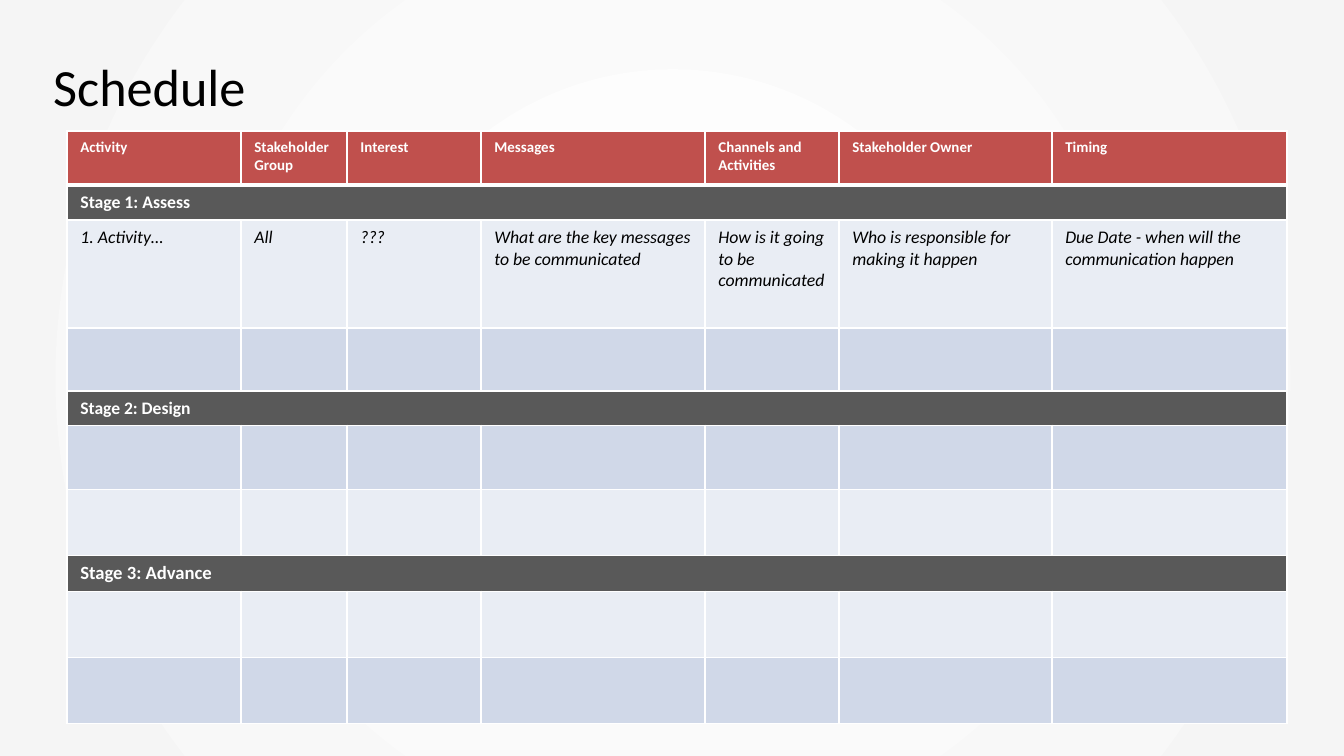
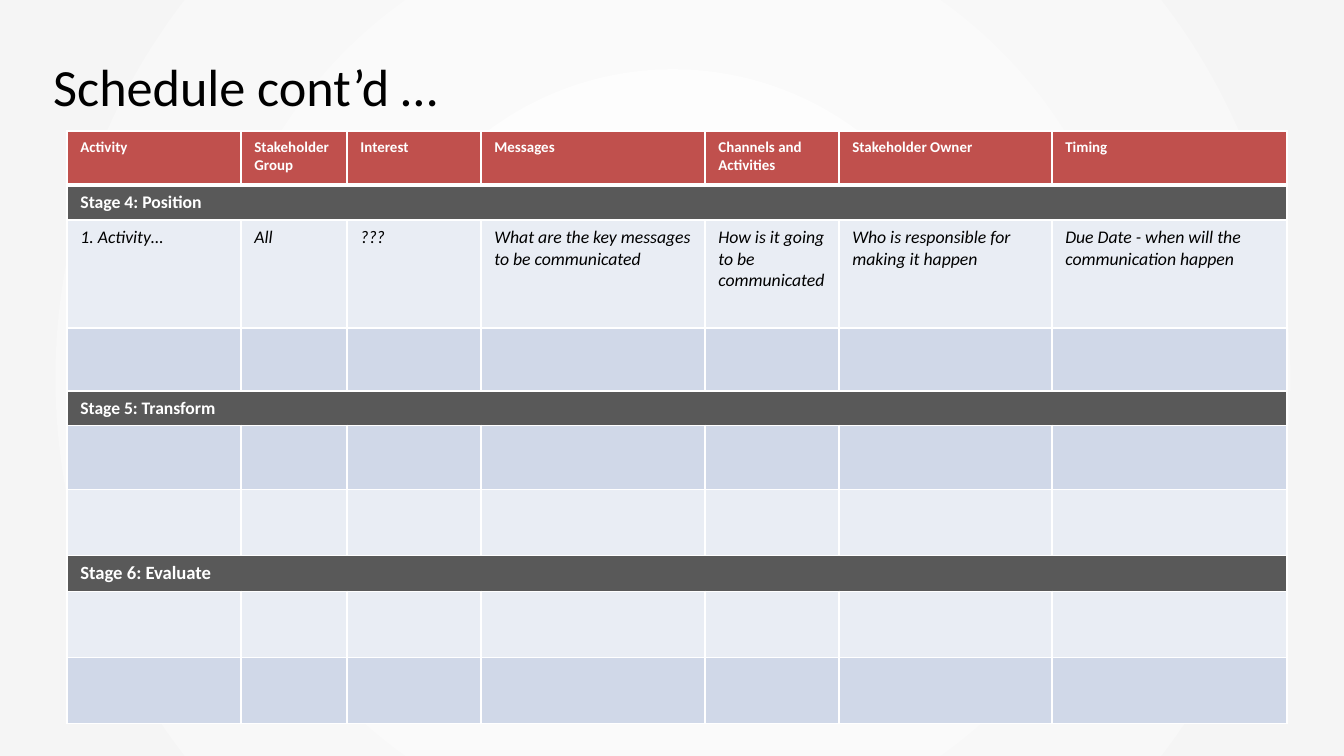
from lxml import etree
from pptx import Presentation, util as u
from pptx.dml.color import RGBColor
from pptx.enum import shapes, text
from pptx.oxml.ns import qn

SCALE = 914400 / 134.4
WIDE, HIGH = 1344, 756
FONT = "Calibri"
WHITE = RGBColor(255, 255, 255)
BLACK = RGBColor(0, 0, 0)
SMOKE = RGBColor(0xF5, 0xF5, 0xF5)
RED = RGBColor(0xC0, 0x50, 0x4D)
GRAY = RGBColor(0x59, 0x59, 0x59)
LIGHT = RGBColor(0xE9, 0xED, 0xF4)
BLUE = RGBColor(0xD0, 0xD8, 0xE8)

COLS = [174, 106, 134, 224, 134, 213, 235]
ROWS = [54, 35, 108, 63, 34, 64, 66, 36, 66, 66]
FILLS = [RED, GRAY, LIGHT, BLUE, GRAY, BLUE, LIGHT, GRAY, LIGHT, BLUE]
STAGES = {1: 9.5, 4: 9.4, 7: 10}
HEADS = ["Activity", "Stakeholder\vGroup", "Interest", "Messages",
         "Channels and Activities", "Stakeholder Owner", "Timing"]
SAMPLE = ["1. Activity…", "All", "???",
          "What are the key messages to be communicated",
          "How is it going to be communicated",
          "Who is responsible for making it happen",
          "Due Date - when will the communication happen"]
SLIDES = [
    ("Schedule", ["Stage 1: Assess", "Stage 2: Design", "Stage 3: Advance"]),
    ("Schedule cont’d …",
     ["Stage 4: Position", "Stage 5: Transform", "Stage 6: Evaluate"]),
]


def px(num):
    """Turn px into EMU."""
    return u.Emu(round(num * SCALE))


def write(frame, words, size, color, bold=False, italic=False):
    """Write one paragraph in one font."""
    para = frame.paragraphs[0]
    para.text = words
    font = para.font
    font.name, font.size, font.color.rgb = FONT, u.Pt(size), color
    font.bold, font.italic = bold, italic


def backdrop(slide):
    """Cover the slide with a round gradient."""
    rect = slide.shapes.add_shape(
        shapes.MSO_SHAPE.RECTANGLE, 0, 0, px(WIDE + 2), px(HIGH))
    rect.shadow.inherit = False
    rect.line.fill.background()
    rect.fill.gradient()
    for stop, color in zip(rect.fill.gradient_stops, (WHITE, SMOKE)):
        stop.color.rgb = color
    grad = rect.element.spPr.find(qn("a:gradFill"))
    grad.remove(grad.find(qn("a:lin")))
    ring = etree.SubElement(grad, qn("a:path"), {"path": "circle"})
    etree.SubElement(ring, qn("a:fillToRect"), dict.fromkeys("ltrb", "50000"))


def title(slide, words):
    """Add the slide title."""
    frame = slide.shapes.add_textbox(px(40), px(54), px(1176), px(63)).text_frame
    frame.word_wrap = True
    frame.vertical_anchor = text.MSO_ANCHOR.MIDDLE
    write(frame, words, 28, BLACK)


def paint(cell, row):
    """Give a cell its white borders and its row's fill."""
    props = cell._tc.get_or_add_tcPr()
    wide = {"T": 3 if row == 1 else 1, "B": 3 if row == 0 else 1}
    for side in "LRTB":
        line = etree.SubElement(
            props, qn("a:ln" + side), w=str(u.Pt(wide.get(side, 1))))
        solid = etree.SubElement(line, qn("a:solidFill"))
        etree.SubElement(solid, qn("a:srgbClr"), val=str(WHITE))
    cell.fill.solid()
    cell.fill.fore_color.rgb = FILLS[row]


def schedule(slide, stages):
    """Add the schedule table with its three stages."""
    table = slide.shapes.add_table(
        len(ROWS), len(COLS), px(67), px(131), px(sum(COLS)), px(sum(ROWS))).table
    table.first_row = table.horz_banding = False
    for col, size in zip(table.columns, COLS):
        col.width = px(size)
    for row, size in enumerate(ROWS):
        table.rows[row].height = px(size)
        for col in range(len(COLS)):
            paint(table.cell(row, col), row)
    for col, (head, sample) in enumerate(zip(HEADS, SAMPLE)):
        write(table.cell(0, col).text_frame, head, 8, WHITE, bold=True)
        write(table.cell(2, col).text_frame, sample, 9.5, BLACK, italic=True)
    for (row, size), stage in zip(STAGES.items(), stages):
        cell = table.cell(row, 0)
        cell.merge(table.cell(row, len(COLS) - 1))
        write(cell.text_frame, stage, size, WHITE, bold=True)


def main():
    """Build and save the deck."""
    deck = Presentation()
    deck.slide_width, deck.slide_height = px(WIDE), px(HIGH)
    for words, stages in SLIDES:
        slide = deck.slides.add_slide(deck.slide_layouts[6])
        backdrop(slide)
        title(slide, words)
        schedule(slide, stages)
    deck.save("out.pptx")


if __name__ == "__main__":
    main()
